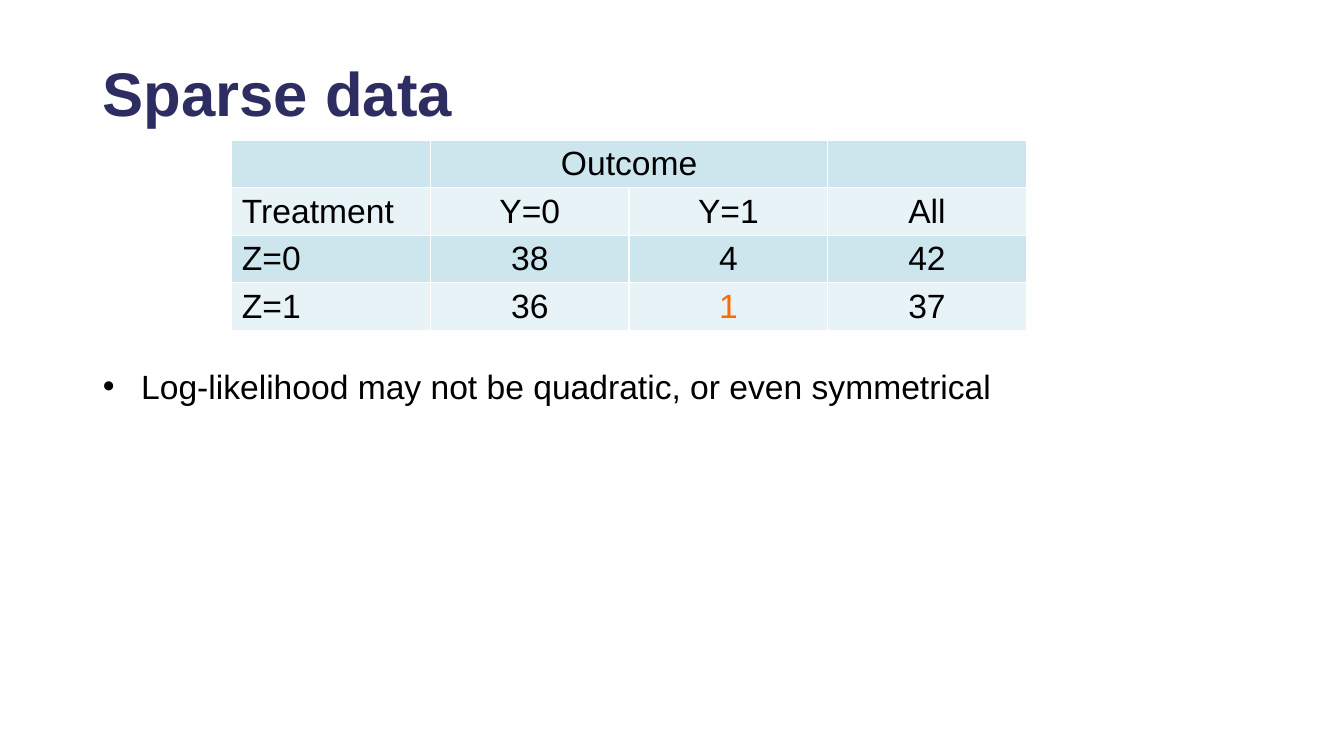
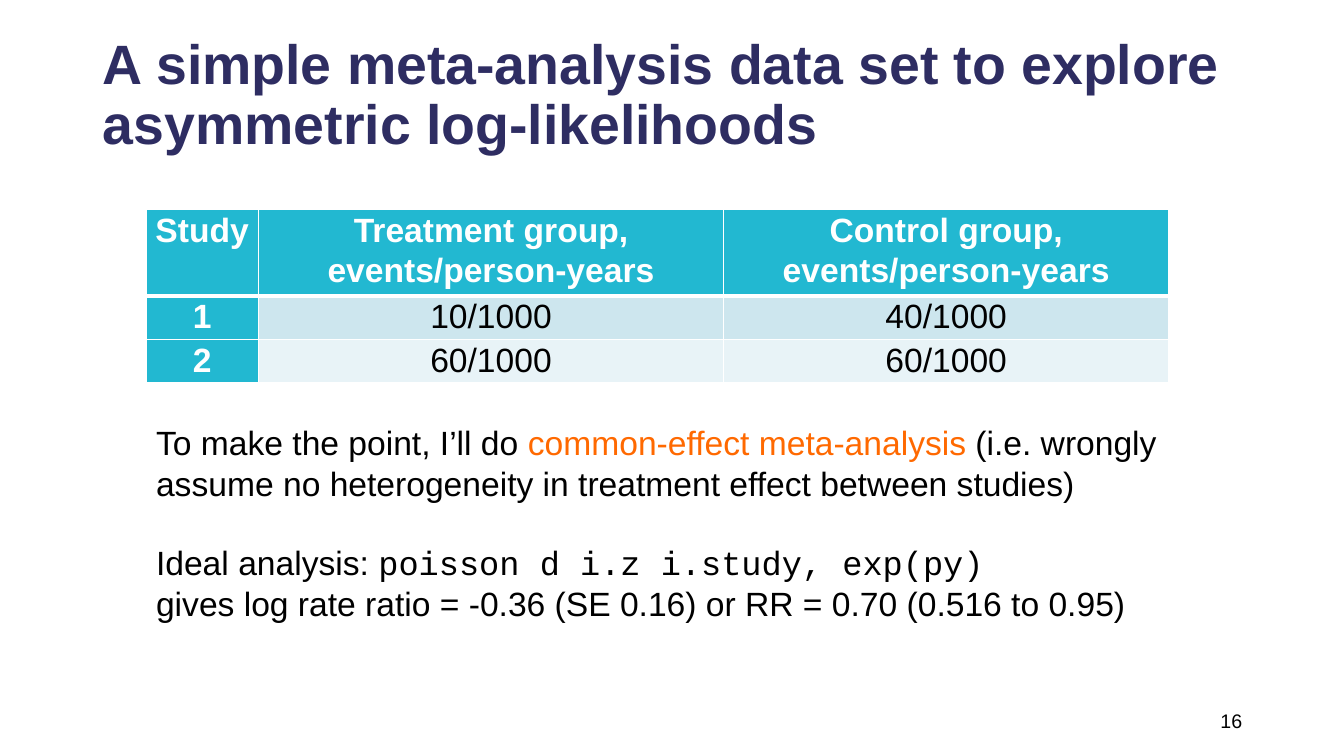
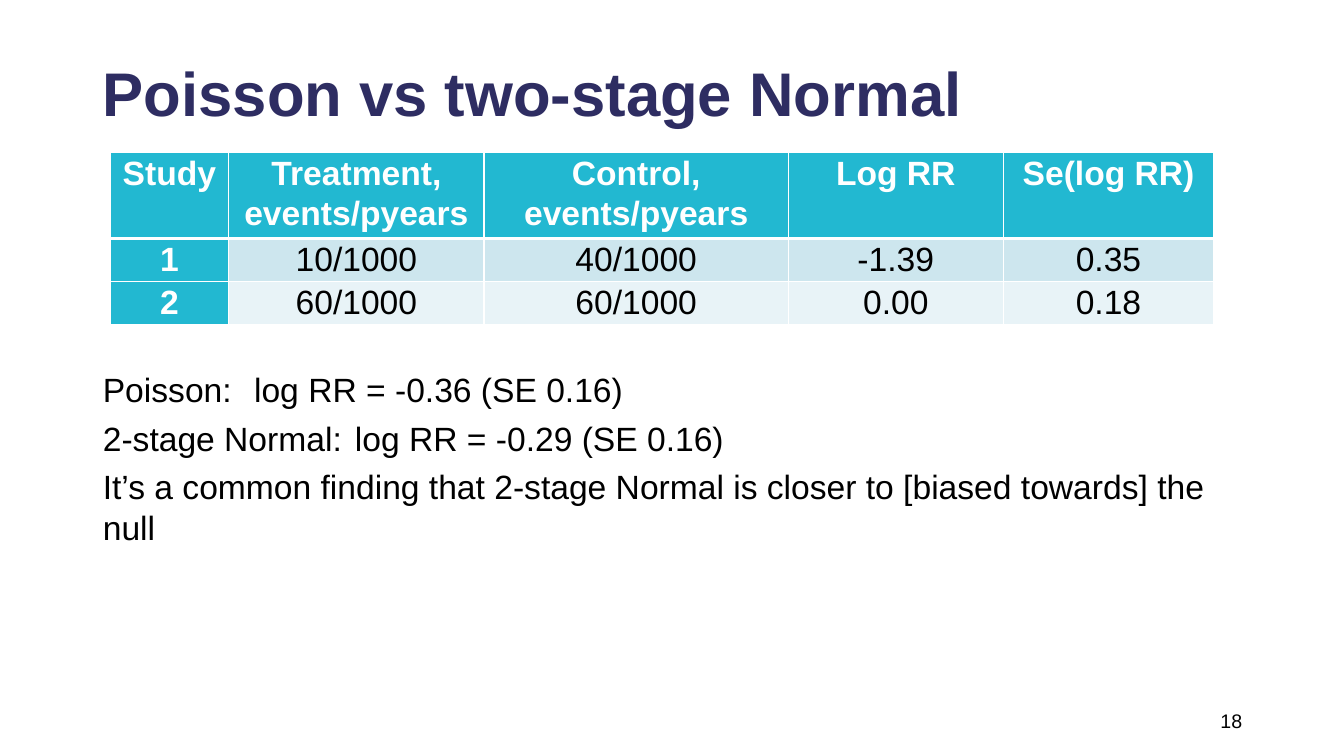
from lxml.etree import SubElement
from pptx import Presentation
from pptx.dml.color import RGBColor
from pptx.enum.text import MSO_ANCHOR, MSO_AUTO_SIZE, PP_ALIGN
from pptx.oxml.ns import qn
from pptx.util import Inches, Pt

NAVY, BLACK, WHITE, ORANGE = "2E2D62", "000000", "FFFFFF", "FF6900"
TEAL, BANDS = "22B8D1", ("CDE6EE", "E8F3F7")
SANS, MONO = "Arial", "Courier New"


def rgb(code):
    return RGBColor.from_string(code)


def place(shape, left, top, width, height):
    shape.left, shape.top = Inches(left), Inches(top)
    shape.width, shape.height = Inches(width), Inches(height)


def style(par, size=24, color=BLACK, bold=False, font=SANS):
    for run in par.runs:
        run.font.size, run.font.bold, run.font.name = Pt(size), bold, font
        run.font.color.rgb = rgb(color)


def edge(cell, **widths):
    """Draw white cell borders, given in points by side: L, R, T, B."""
    props = cell._tc.get_or_add_tcPr()
    for side, width in widths.items():
        line = SubElement(props, qn(f"a:ln{side}"), w=str(Pt(width)))
        fill = SubElement(line, qn("a:solidFill"))
        SubElement(fill, qn("a:srgbClr"), val=WHITE)


class Deck:
    def __init__(self):
        self.prs = Presentation()
        self.prs.slide_width = Inches(13.33)
        self.prs.slide_height = Inches(7.5)

    def start(self, title, size=44, layout=1):
        self.slide = self.prs.slides.add_slide(self.prs.slide_layouts[layout])
        shape = self.slide.shapes.title
        place(shape, 0.92, 0.4, 11.5, 1.11)
        frame = shape.text_frame
        frame.text = title
        frame.auto_size = MSO_AUTO_SIZE.NONE
        frame.vertical_anchor = MSO_ANCHOR.MIDDLE
        par = frame.paragraphs[0]
        par.alignment, par.line_spacing = PP_ALIGN.LEFT, 0.9
        style(par, size, NAVY, True)

    def body(self, top, height, lines, bullet=False):
        """Fill the body with (text, tab stop in inches or None) lines."""
        shape = self.slide.placeholders[1]
        place(shape, 0.92, top, 11.5, height)
        frame = shape.text_frame
        frame.text = "\n".join(text for text, _ in lines)
        frame.auto_size = MSO_AUTO_SIZE.NONE
        indent = Inches(0.38) if bullet else 0
        for par, (_, stop) in zip(frame.paragraphs, lines):
            props = par._p.get_or_add_pPr()
            props.set("marL", str(indent))
            props.set("indent", str(-indent))
            if bullet:
                SubElement(props, qn("a:buFont"), typeface=SANS)
                SubElement(props, qn("a:buChar"), char="•")
            else:
                SubElement(props, qn("a:buNone"))
            if stop:
                tabs = SubElement(props, qn("a:tabLst"))
                SubElement(tabs, qn("a:tab"), pos=str(Inches(stop)), algn="l")
            par.space_before, par.space_after = Pt(0), Pt(6)
            style(par)

    def box(self, left, top, width, height):
        frame = self.slide.shapes.add_textbox(
            Inches(left), Inches(top), Inches(width), Inches(height)).text_frame
        frame.word_wrap = True
        return frame

    def number(self, text):
        frame = self.box(9.42, 6.95, 3, 0.4)
        frame.vertical_anchor = MSO_ANCHOR.MIDDLE
        frame.text = text
        par = frame.paragraphs[0]
        par.alignment = PP_ALIGN.RIGHT
        style(par, 14)

    def prose(self, spot, lines):
        """Write lines of (space before, [(text, color, font), ...])."""
        frame = self.box(*spot)
        for i, (gap, parts) in enumerate(lines):
            par = frame.add_paragraph() if i else frame.paragraphs[0]
            if gap:
                par.space_before = Pt(gap)
            for text, color, font in parts:
                run = par.add_run()
                run.text = text
                run.font.size, run.font.name = Pt(24), font
                run.font.color.rgb = rgb(color)

    def grid(self, left, top, widths, heights, rows):
        """Add a plain table and return it."""
        shape = self.slide.shapes.add_table(
            len(rows), len(widths), Inches(left), Inches(top),
            Inches(sum(widths)), Inches(sum(heights)))
        table = shape.table
        table.first_row = table.horz_banding = False
        for col, width in zip(table.columns, widths):
            col.width = Inches(width)
        for row, height, texts in zip(table.rows, heights, rows):
            row.height = Inches(height)
            for cell, text in zip(row.cells, texts):
                cell.text = text
        return table

    def counts(self, left, top, width, rows, hot):
        """Add a banded table with a heading merged over columns 1 and 2."""
        table = self.grid(left, top, [width] * 4, [0.47] * 4, rows)
        for r, row in enumerate(table.rows):
            for c, cell in enumerate(row.cells):
                edge(cell, L=1, R=1, T=1, B=1)
                cell.fill.solid()
                cell.fill.fore_color.rgb = rgb(BANDS[r % 2])
                cell.vertical_anchor = MSO_ANCHOR.MIDDLE
                par = cell.text_frame.paragraphs[0]
                par.alignment = PP_ALIGN.CENTER if c else PP_ALIGN.LEFT
                style(par, color=ORANGE if (r, c) == hot else BLACK)
        table.cell(0, 1).merge(table.cell(0, 2))

    def studies(self, left, top, widths, rows):
        """Add a table with a teal heading row and first column."""
        table = self.grid(left, top, widths, [0.79, 0.4, 0.4], rows)
        for r, row in enumerate(table.rows):
            for c, cell in enumerate(row.cells):
                head = r == 0 or c == 0
                edge(cell, L=1, R=1, T=3 if r == 1 else 1, B=1 if r else 3)
                cell.fill.solid()
                cell.fill.fore_color.rgb = rgb(TEAL if head else BANDS[r - 1])
                cell.margin_left = cell.margin_right = Inches(0.07)
                cell.margin_top = cell.margin_bottom = 0
                par = cell.text_frame.paragraphs[0]
                par.alignment, par.line_spacing = PP_ALIGN.CENTER, 1.07
                par.space_after = Pt(8)
                style(par, color=WHITE if head else BLACK, bold=head)


def main():
    deck = Deck()

    deck.start("Sparse data")
    deck.body(3.58, 2.73, [
        ("Log-likelihood may not be quadratic, or even symmetrical", None),
    ], bullet=True)
    deck.counts(2.3, 1.39, 1.97, [
        ("", "Outcome", "", ""),
        ("Treatment", "Y=0", "Y=1", "All"),
        ("Z=0", "38", "4", "42"),
        ("Z=1", "36", "1", "37"),
    ], hot=(3, 2))

    deck.start("A simple meta-analysis data set to explore "
               "asymmetric log-likelihoods", size=39.6, layout=5)
    deck.number("16")
    deck.studies(1.45, 2.08, [1.11, 4.62, 4.41], [
        ("Study", "Treatment group, events/person-years",
         "Control group, events/person-years"),
        ("1", "10/1000", "40/1000"),
        ("2", "60/1000", "60/1000"),
    ])
    deck.prose((1.45, 4.14, 10.14, 2.12), [
        (0, [("To make the point, I’ll do ", BLACK, SANS),
             ("common-effect meta-analysis ", ORANGE, SANS),
             ("(i.e. wrongly assume no heterogeneity in treatment effect "
              "between studies)", BLACK, SANS)]),
        (28, [("Ideal analysis: ", BLACK, SANS),
              ("poisson d i.z i.study, exp(py)", BLACK, MONO)]),
        (0, [("gives log rate ratio = -0.36 (SE 0.16) or "
              "RR = 0.70 (0.516 to 0.95)", BLACK, SANS)]),
    ])

    deck.start("Poisson vs two-stage Normal")
    deck.number("18")
    deck.body(3.61, 2.7, [
        ("Poisson:\tlog RR = -0.36 (SE 0.16)", 2),
        ("2-stage Normal:\tlog RR = -0.29 (SE 0.16)", 3),
        ("It’s a common finding that 2-stage Normal is closer to "
         "[biased towards] the null", None),
    ])
    deck.studies(1.09, 1.51, [1.18, 2.53, 3.02, 2.13, 2.09], [
        ("Study", "Treatment, events/pyears", "Control, events/pyears",
         "Log RR", "Se(log RR)"),
        ("1", "10/1000", "40/1000", "-1.39", "0.35"),
        ("2", "60/1000", "60/1000", "0.00", "0.18"),
    ])

    deck.prs.save("out.pptx")


if __name__ == "__main__":
    main()
